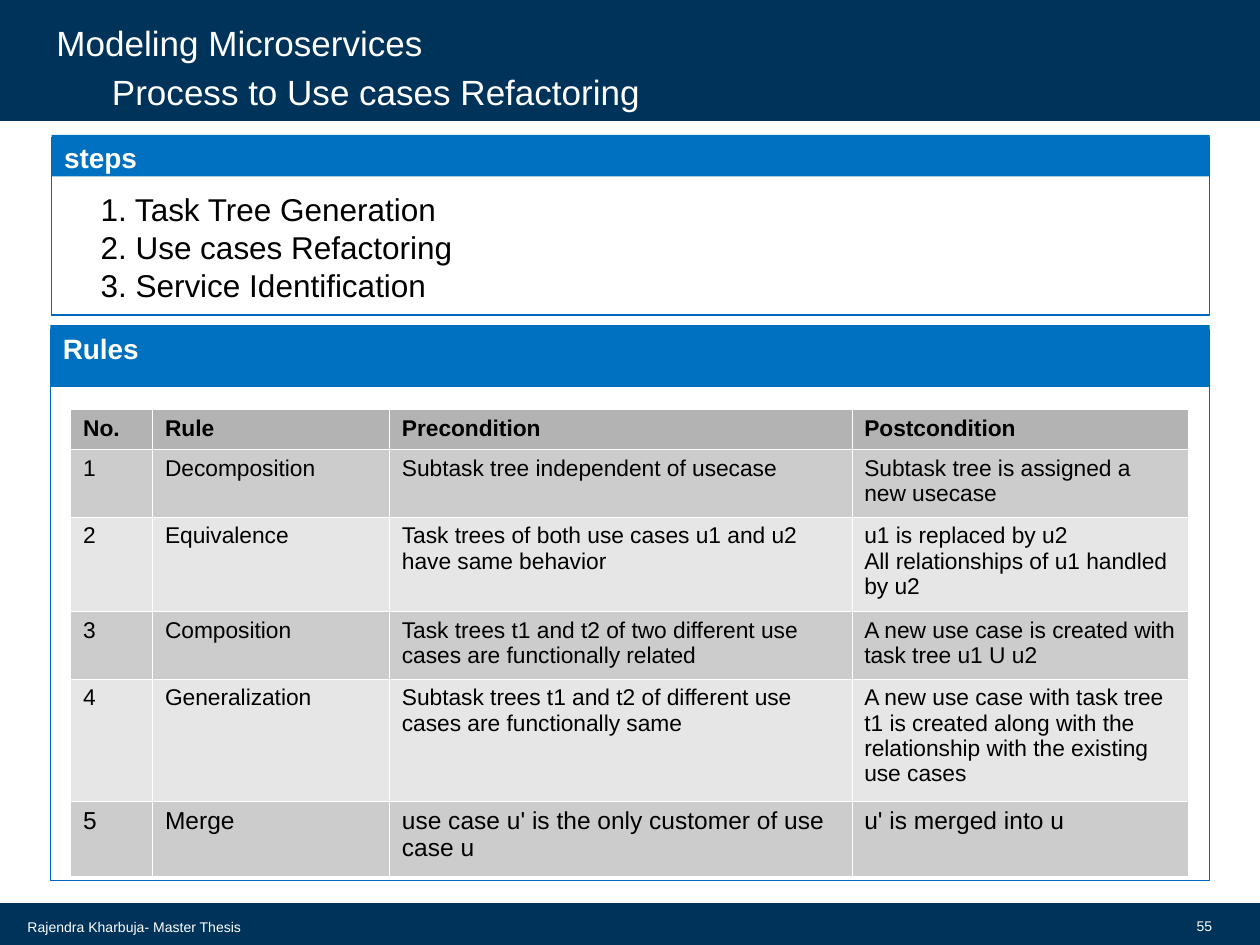
from dataclasses import dataclass
from lxml.etree import SubElement
from pptx import Presentation
from pptx.dml.color import RGBColor
from pptx.enum.shapes import MSO_SHAPE
from pptx.enum.text import MSO_ANCHOR, PP_ALIGN
from pptx.oxml.ns import qn
from pptx.util import Inches, Pt


@dataclass(frozen=True)
class Theme:
    font: str = "Arial"
    navy: str = "003359"
    band: str = "0070C0"
    edge: str = "0065BD"
    white: str = "FFFFFF"
    black: str = "000000"
    header: str = "B3B3B3"
    odd: str = "CCCCCC"
    even: str = "E6E6E6"
    title: float = 20
    step: float = 18
    label: float = 16
    cell: float = 13
    last: float = 14
    foot: float = 8


THEME = Theme()

STEPS = ["1. Task Tree Generation", "2. Use cases Refactoring",
         "3. Service Identification"]
COLS = [0.65, 1.88, 3.67, 2.67]
ROWS = [0.3, 0.51, 0.71, 0.51, 0.91, 0.6]
RULES = [
    ["No.", "Rule", "Precondition", "Postcondition"],
    ["1", "Decomposition", "Subtask tree independent of usecase",
     "Subtask tree is assigned a new usecase"],
    ["2", "Equivalence",
     "Task trees of both use cases u1 and u2 have same behavior",
     "u1 is replaced by u2\nAll relationships of u1 handled by u2"],
    ["3", "Composition",
     "Task trees t1 and t2 of two different use cases are functionally related",
     "A new use case is created with task tree u1 U u2"],
    ["4", "Generalization",
     "Subtask trees t1 and t2 of different use cases are functionally same",
     "A new use case with task tree t1 is created along with the "
     "relationship with the existing use cases"],
    ["5", "Merge", "use case u' is the only customer of use case u",
     "u' is merged into u"],
]


def assign(obj, form):
    for key, val in form.items():
        setattr(obj, key, val)


def write(frame, text, size, color, bold=False, **form):
    """Fill a text frame; form holds paragraph settings."""
    frame.text = text
    for para in frame.paragraphs:
        assign(para, form)
        for run in para.runs:
            assign(run.font,
                   {"name": THEME.font, "size": Pt(size), "bold": bold})
            run.font.color.rgb = RGBColor.from_string(color)


def add_box(slide, place, fill=None, line=None, width=0.75):
    box = slide.shapes.add_shape(MSO_SHAPE.RECTANGLE, *map(Inches, place))
    box.shadow.inherit = False
    for part, color in ((box.fill, fill), (box.line.fill, line)):
        if color:
            part.solid()
            part.fore_color.rgb = RGBColor.from_string(color)
        else:
            part.background()
    if line:
        box.line.width = Pt(width)
    return box


def add_text(slide, place, text, size, color, frame_form, **form):
    frame = slide.shapes.add_textbox(*map(Inches, place)).text_frame
    assign(frame, {"word_wrap": True, **frame_form})
    write(frame, text, size, color, **form)


def add_panel(slide, body, band, label):
    """Outlined box under a labelled band."""
    add_box(slide, body, line=THEME.edge)
    frame = add_box(slide, band, fill=THEME.band).text_frame
    assign(frame, {"vertical_anchor": MSO_ANCHOR.TOP, "word_wrap": True})
    write(frame, label, THEME.label, THEME.white, bold=True,
          alignment=PP_ALIGN.LEFT)


def add_edges(cell):
    props = cell._tc.get_or_add_tcPr()
    for spot, side in enumerate(("lnL", "lnR", "lnT", "lnB")):
        line = props.makeelement(qn(f"a:{side}"), {"w": str(Pt(0.06))})
        props.insert(spot, line)
        fill = SubElement(line, qn("a:solidFill"))
        SubElement(fill, qn("a:srgbClr"), val=THEME.white)


def add_rules(slide, left, top):
    size = (sum(COLS), sum(ROWS))
    table = slide.shapes.add_table(len(ROWS), len(COLS),
                                   *map(Inches, (left, top, *size))).table
    for col, width in zip(table.columns, COLS):
        col.width = Inches(width)
    for r, (row, height) in enumerate(zip(table.rows, ROWS)):
        row.height = Inches(height)
        fill = THEME.odd if r % 2 else THEME.even
        if r == 0:
            fill = THEME.header
        points = THEME.last if r == len(ROWS) - 1 else THEME.cell
        for cell, text in zip(row.cells, RULES[r]):
            cell.fill.solid()
            cell.fill.fore_color.rgb = RGBColor.from_string(fill)
            write(cell.text_frame, text, points, THEME.black, bold=r == 0)
            add_edges(cell)


def main():
    deck = Presentation()
    assign(deck, {"slide_width": Inches(10), "slide_height": Inches(7.5)})
    slide = deck.slides.add_slide(deck.slide_layouts[6])

    # Bars at top and bottom
    for place in ((0, 7.18, 10, 0.32), (0, 0, 10, 0.95)):
        add_box(slide, place, THEME.navy, THEME.navy, 1.35)

    # Title lines
    low = {"vertical_anchor": MSO_ANCHOR.BOTTOM,
           "margin_top": 0, "margin_bottom": 0}
    add_text(slide, (0.35, 0.11, 8.24, 0.39), "Modeling Microservices",
             THEME.title, THEME.white, low)
    add_text(slide, (0.79, 0.5, 6.51, 0.39), "Process to Use cases Refactoring",
             THEME.title, THEME.white, low)

    # Steps
    add_panel(slide, (0.41, 1.09, 9.19, 1.41), (0.41, 1.07, 9.19, 0.33), "steps")
    add_text(slide, (0.7, 1.46, 4.5, 0.94), "\n".join(STEPS),
             THEME.step, THEME.black, {})

    # Rules
    add_panel(slide, (0.4, 2.62, 9.2, 4.37), (0.4, 2.58, 9.2, 0.49), "Rules")
    add_rules(slide, 0.56, 3.25)

    # Footer
    mid = {"vertical_anchor": MSO_ANCHOR.MIDDLE}
    add_text(slide, (0.12, 7.2, 2.13, 0.31), "Rajendra Kharbuja- Master Thesis",
             THEME.foot, THEME.white, mid)
    add_text(slide, (9.45, 7.19, 0.27, 0.32), "55", THEME.foot, THEME.white,
             {**mid, "word_wrap": False, "margin_left": 0},
             alignment=PP_ALIGN.RIGHT)

    deck.save("out.pptx")


if __name__ == "__main__":
    main()
